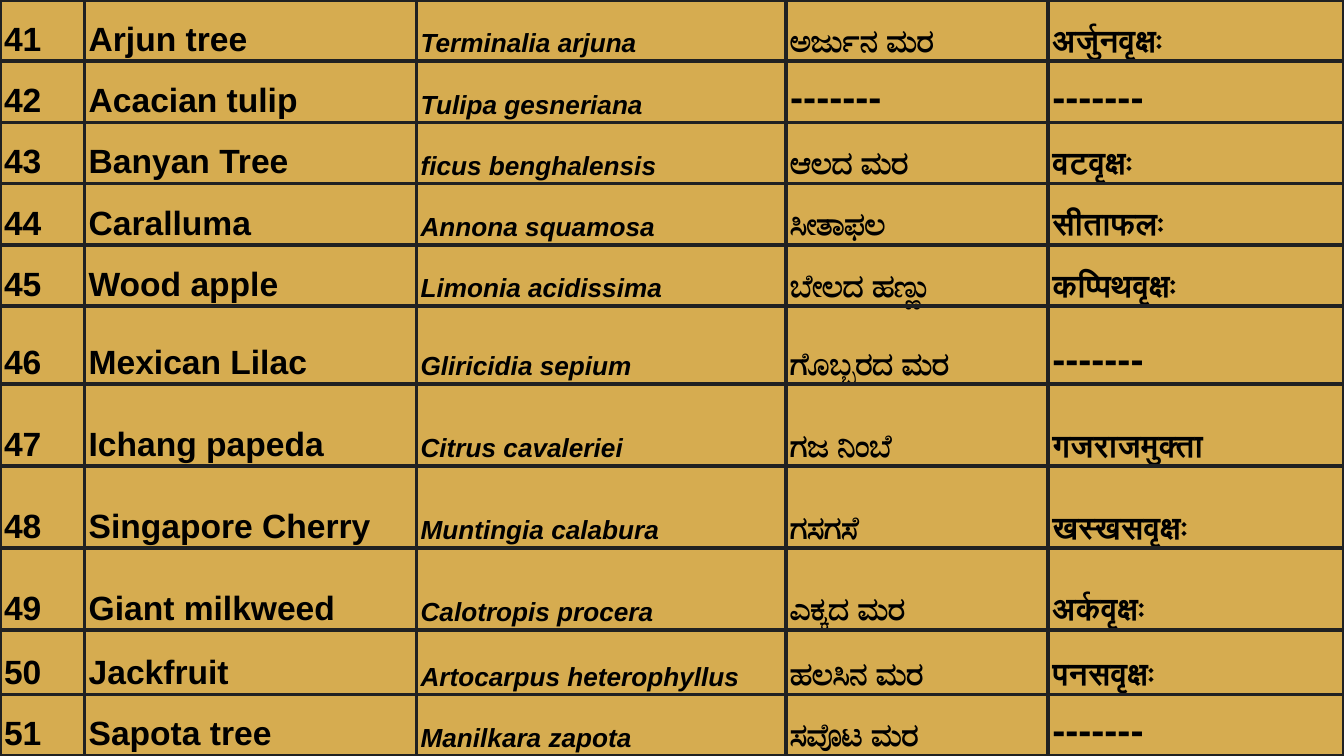
from dataclasses import dataclass

from lxml.etree import SubElement
from pptx import Presentation
from pptx.dml.color import RGBColor as RGB
from pptx.enum.text import MSO_ANCHOR as Anchor
from pptx.oxml.ns import qn
from pptx.util import Inches, Pt


@dataclass(frozen=True)
class Theme:
    font: str = "Arial"
    back: str = "D6AC50"
    ink: str = "000000"
    rule: str = "202122"
    line: float = 2.25
    name: int = 18
    latin: int = 14
    local: int = 17
    dash: int = 21


theme = Theme()
DASH = "-------"
trees = [
    ("Arjun tree", "Terminalia arjuna", "ಅರ್ಜುನ ಮರ", "अर्जुनवृक्षः"),
    ("Acacian tulip", "Tulipa gesneriana", DASH, DASH),
    ("Banyan Tree", "ficus benghalensis", "ಆಲದ ಮರ", "वटवृक्षः"),
    ("Caralluma", "Annona squamosa", "ಸೀತಾಫಲ", "सीताफलः"),
    ("Wood apple", "Limonia acidissima", "ಬೇಲದ ಹಣ್ಣು", "कप्पिथवृक्षः"),
    ("Mexican Lilac", "Gliricidia sepium", "ಗೊಬ್ಬರದ ಮರ", DASH),
    ("Ichang papeda", "Citrus cavaleriei", "ಗಜ ನಿಂಬೆ", "गजराजमुक्ता"),
    ("Singapore Cherry", "Muntingia calabura", "ಗಸಗಸೆ", "खस्खसवृक्षः"),
    ("Giant milkweed", "Calotropis procera", "ಎಕ್ಕದ ಮರ", "अर्कवृक्षः"),
    ("Jackfruit", "Artocarpus heterophyllus", "ಹಲಸಿನ ಮರ", "पनसवृक्षः"),
    ("Sapota tree", "Manilkara zapota", "ಸಪೊಟ ಮರ", DASH),
]
FIRST = 41
LATIN = 2
WIDE = 10
HIGH = WIDE * 9 / 16

# The last column and the short rows share out what is left of the slide.
widths = [0.63, 2.47, 2.75, 1.95]
widths.append(WIDE - sum(widths))
tall = [0.58, 0.61, 0.61, 0.61, 0.48]
short = (HIGH - sum(tall)) / (len(trees) - len(tall))
heights = [short] * 5 + tall + [short]
sizes = [theme.name, theme.name, theme.latin, theme.local, theme.local]


def add_rules(cell):
    """Draw the four borders of a cell and leave it unfilled."""
    props = cell._tc.get_or_add_tcPr()
    for side in ("lnL", "lnR", "lnT", "lnB"):
        line = SubElement(props, qn(f"a:{side}"), w=str(Pt(theme.line)))
        fill = SubElement(line, qn("a:solidFill"))
        SubElement(fill, qn("a:srgbClr"), val=theme.rule)
    cell.fill.background()


deck = Presentation()
deck.slide_width, deck.slide_height = Inches(WIDE), Inches(HIGH)
slide = deck.slides.add_slide(deck.slide_layouts[6])
slide.background.fill.solid()
slide.background.fill.fore_color.rgb = RGB.from_string(theme.back)

frame = slide.shapes.add_table(
    len(trees), len(widths), 0, 0, Inches(WIDE), Inches(HIGH)
)
table = frame.table
table.first_row = table.horz_banding = False
for col, width in zip(table.columns, widths):
    col.width = Inches(width)
for row, height in zip(table.rows, heights):
    row.height = Inches(height)

for r, tree in enumerate(trees):
    for c, text in enumerate((str(FIRST + r), *tree)):
        cell = table.cell(r, c)
        cell.vertical_anchor = Anchor.BOTTOM
        cell.margin_left = cell.margin_right = Inches(0.03)
        cell.margin_top = cell.margin_bottom = Inches(0.02)
        add_rules(cell)

        para = cell.text_frame.paragraphs[0]
        para.line_spacing = 1.0 if text == DASH else 1.15
        run = para.add_run()
        run.text = text
        font = run.font
        font.name = theme.font
        font.size = Pt(theme.dash if text == DASH else sizes[c])
        font.bold = True
        font.italic = c == LATIN
        font.color.rgb = RGB.from_string(theme.ink)

deck.save("out.pptx")
